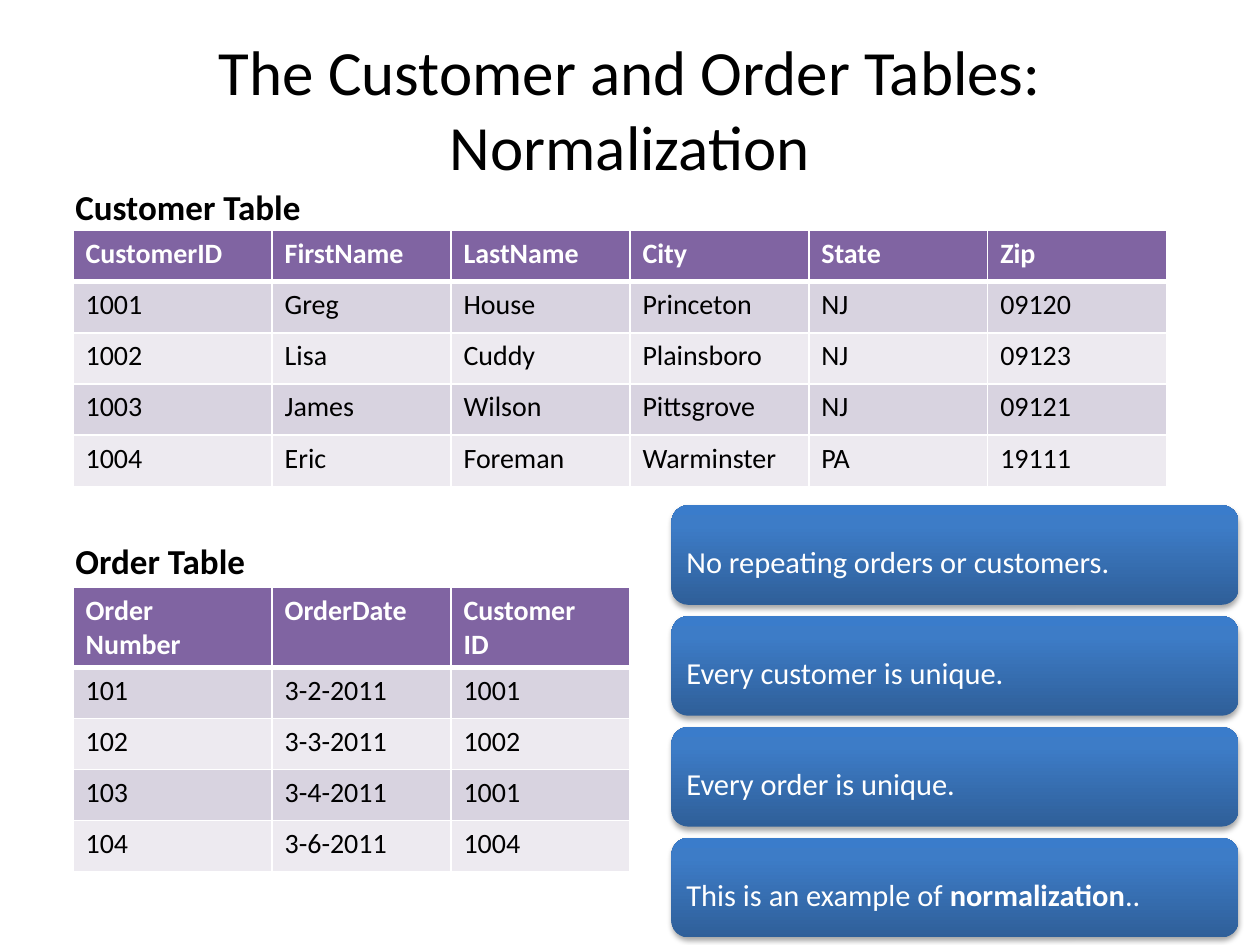
"""Build the slide on normalization of the customer and order tables."""
import pptx
import pptx.dml.color
import pptx.enum.shapes
import pptx.enum.text
import pptx.oxml
import pptx.oxml.ns
import pptx.util

Inches = pptx.util.Inches
Pt = pptx.util.Pt
RGBColor = pptx.dml.color.RGBColor
qn = pptx.oxml.ns.qn

FONT = "Calibri"
BLACK = RGBColor(0x00, 0x00, 0x00)
WHITE = RGBColor(0xFF, 0xFF, 0xFF)
HEADER_PURPLE = RGBColor(0x80, 0x64, 0xA2)
BANDS = [RGBColor(0xD8, 0xD3, 0xE0), RGBColor(0xED, 0xEA, 0xF0)]
BOX_GRADIENT = [
    (0, RGBColor(0x2F, 0x5F, 0x99)),
    (80, RGBColor(0x3D, 0x7C, 0xC7)),
    (100, RGBColor(0x3A, 0x7C, 0xCB)),
]

TITLE = "The Customer and Order Tables:\vNormalization"
CUSTOMERS = [
    ("CustomerID", "FirstName", "LastName", "City", "State", "Zip"),
    ("1001", "Greg", "House", "Princeton", "NJ", "09120"),
    ("1002", "Lisa", "Cuddy", "Plainsboro", "NJ", "09123"),
    ("1003", "James", "Wilson", "Pittsgrove", "NJ", "09121"),
    ("1004", "Eric", "Foreman", "Warminster", "PA", "19111"),
]
ORDERS = [
    ("Order\vNumber", "OrderDate", "Customer\vID"),
    ("101", "3-2-2011", "1001"),
    ("102", "3-3-2011", "1002"),
    ("103", "3-4-2011", "1001"),
    ("104", "3-6-2011", "1004"),
]
TABLES = [
    {"label": "Customer Table", "label_top": 1.42, "label_width": 2.3,
     "rows": CUSTOMERS, "top": 1.83, "height": 2.03},
    {"label": "Order Table", "label_top": 4.23, "label_width": 1.75,
     "rows": ORDERS, "top": 4.66, "height": 2.26},
]
STATEMENTS = [
    [("No repeating orders or customers.", False)],
    [("Every customer is unique.", False)],
    [("Every order is unique.", False)],
    [("This is an example of ", False), ("normalization", True), ("..", False)],
]

TABLE_LEFT = 0.58
FIRST_COLUMN, OTHER_COLUMN = 1.58, 1.42
BODY_ROW = 2.03 / 5
BOX_LEFT, BOX_TOP, BOX_WIDTH, BOX_HEIGHT = 5.33, 4.01, 4.5, 0.79
BOX_PITCH = 0.88
BOX_INSET = 0.08
NAMESPACE = pptx.oxml.ns.nsdecls("a")


def set_font(font, size, color, bold=False):
    font.name = FONT
    font.size = Pt(size)
    font.bold = bold
    font.color.rgb = color


def add_text(slide, text, left, top, width, height, size, bold=False):
    text_box = slide.shapes.add_textbox(
        Inches(left), Inches(top), Inches(width), Inches(height))
    text_box.text_frame.text = text
    set_font(text_box.text_frame.paragraphs[0].font, size, BLACK, bold)
    return text_box.text_frame


def set_borders(cell, widths):
    properties = cell._tc.get_or_add_tcPr()
    for index, (side, width) in enumerate(widths.items()):
        properties.insert(index, pptx.oxml.parse_xml(
            f'<a:ln{side} {NAMESPACE} w="{Pt(width)}"><a:solidFill>'
            f'<a:srgbClr val="{WHITE}"/></a:solidFill></a:ln{side}>'))


def add_table(slide, rows, top, height):
    columns = len(rows[0])
    width = FIRST_COLUMN + OTHER_COLUMN * (columns - 1)
    table = slide.shapes.add_table(
        len(rows), columns, Inches(TABLE_LEFT), Inches(top),
        Inches(width), Inches(height)).table
    for index, column in enumerate(table.columns):
        column.width = Inches(OTHER_COLUMN if index else FIRST_COLUMN)
    header_height = height - BODY_ROW * (len(rows) - 1)
    for row_index, values in enumerate(rows):
        header = row_index == 0
        table.rows[row_index].height = Inches(header_height if header else BODY_ROW)
        for column_index, value in enumerate(values):
            cell = table.cell(row_index, column_index)
            cell.text = value
            for paragraph in cell.text_frame.paragraphs:
                set_font(paragraph.font, 16, WHITE if header else BLACK, header)
            cell.fill.solid()
            cell.fill.fore_color.rgb = (
                HEADER_PURPLE if header else BANDS[(row_index - 1) % 2])
            set_borders(cell, {"L": 1, "R": 1, "T": 3 if row_index == 1 else 1,
                               "B": 3 if header else 1})


def style_box(shape):
    shape.line.fill.background()
    shape.fill.gradient()
    stops = "".join(
        f'<a:gs pos="{position * 1000}"><a:srgbClr val="{color}"/></a:gs>'
        for position, color in BOX_GRADIENT)
    properties = shape._element.spPr
    properties.replace(properties.find(qn("a:gradFill")), pptx.oxml.parse_xml(
        f'<a:gradFill {NAMESPACE} rotWithShape="1"><a:gsLst>{stops}</a:gsLst>'
        '<a:lin ang="16200000" scaled="0"/></a:gradFill>'))
    shape.shadow.inherit = False
    properties.find(qn("a:effectLst")).append(pptx.oxml.parse_xml(
        f'<a:outerShdw {NAMESPACE} blurRad="{Pt(3.1)}" dist="{Pt(1.8)}" '
        'dir="5400000" rotWithShape="0"><a:srgbClr val="000000">'
        '<a:alpha val="35000"/></a:srgbClr></a:outerShdw>'))


def add_statement(slide, runs, top):
    shape = slide.shapes.add_shape(
        pptx.enum.shapes.MSO_SHAPE.ROUNDED_RECTANGLE,
        Inches(BOX_LEFT), Inches(top), Inches(BOX_WIDTH), Inches(BOX_HEIGHT))
    style_box(shape)
    frame = shape.text_frame
    frame.word_wrap = True
    frame.vertical_anchor = pptx.enum.text.MSO_ANCHOR.MIDDLE
    frame.margin_left = frame.margin_right = Inches(BOX_INSET)
    frame.margin_top = frame.margin_bottom = Inches(BOX_INSET)
    paragraph = frame.paragraphs[0]
    paragraph.alignment = pptx.enum.text.PP_ALIGN.LEFT
    paragraph.line_spacing = 0.9
    for text, bold in runs:
        run = paragraph.add_run()
        run.text = text
        set_font(run.font, 30, WHITE, bold)
        run._r.get_or_add_rPr().set("baseline", "-3000")


def main():
    presentation = pptx.Presentation()
    presentation.slide_width = Inches(10)
    presentation.slide_height = Inches(7.5)
    slide = presentation.slides.add_slide(presentation.slide_layouts[6])

    title = add_text(slide, TITLE, 0.5, 0.23, 9, 1.25, 36)
    title.word_wrap = True
    title.vertical_anchor = pptx.enum.text.MSO_ANCHOR.MIDDLE
    title.paragraphs[0].alignment = pptx.enum.text.PP_ALIGN.CENTER

    for table in TABLES:
        add_table(slide, table["rows"], table["top"], table["height"])
        label = add_text(slide, table["label"], 0.5, table["label_top"],
                         table["label_width"], 0.44, 20, True)
        label.word_wrap = False

    for index, runs in enumerate(STATEMENTS):
        add_statement(slide, runs, BOX_TOP + index * BOX_PITCH)

    presentation.save("out.pptx")


if __name__ == "__main__":
    main()
